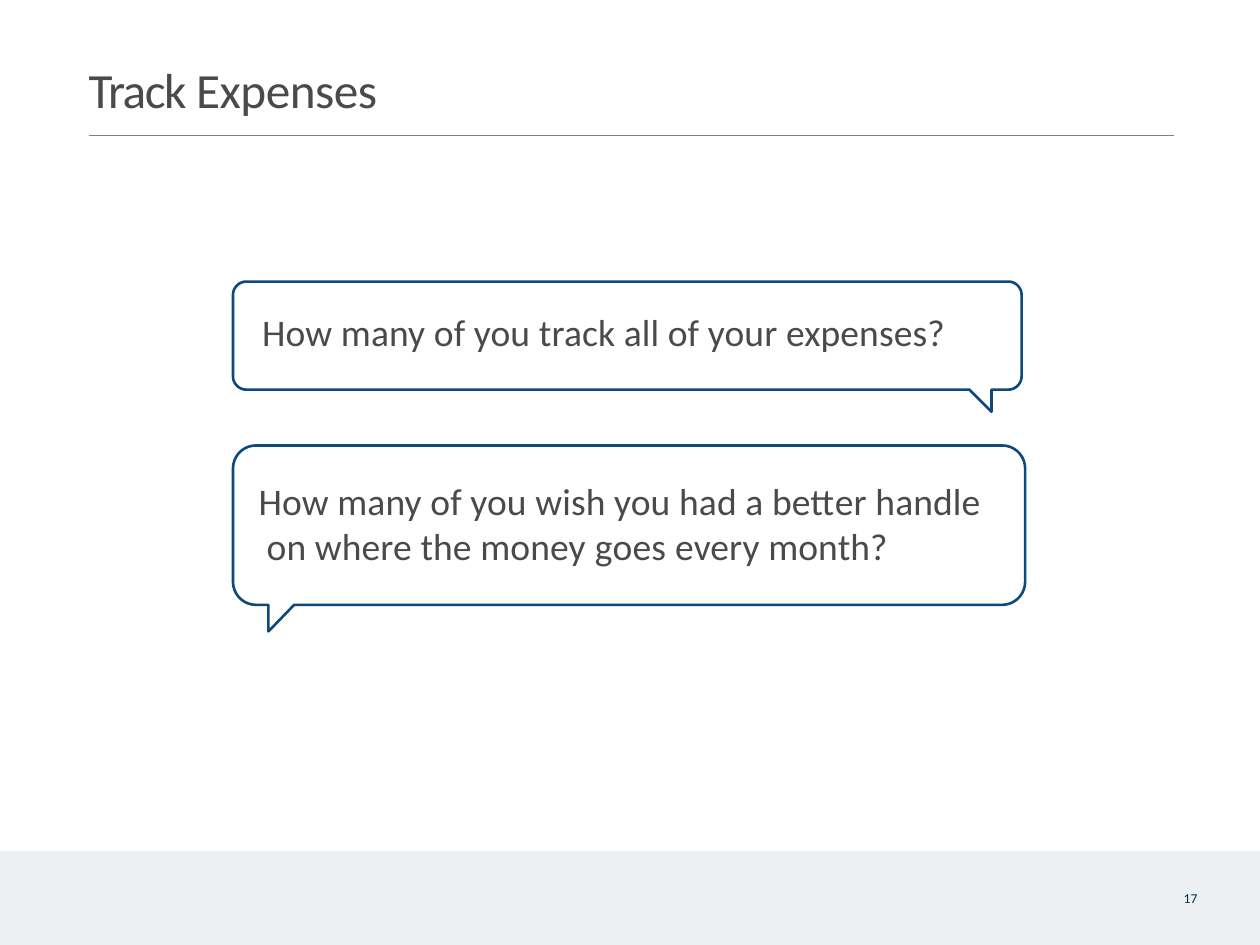
from dataclasses import dataclass
from math import cos, radians, sin

from lxml import etree
from pptx import Presentation
from pptx import util as u
from pptx.dml.color import RGBColor
from pptx.enum import shapes, text
from pptx.oxml import ns

GREY = RGBColor(0x4A, 0x4A, 0x4A)
RULE = RGBColor(0x7F, 0x7F, 0x7F)
BLUE = RGBColor(0x0D, 0x49, 0x7B)
NAVY = RGBColor(0x00, 0x2B, 0x49)
PALE = RGBColor(0xED, 0xF0, 0xF3)
WIDE, HIGH = 14.22, 10.67


@dataclass
class Run:
    words: str
    track: float = 0


@dataclass
class Label:
    left: float
    top: float
    width: float
    height: float
    runs: list[Run]
    size: float
    color: RGBColor
    inset: float = 0.01
    before: float = 1.4
    line: float = 1.0
    margin: float = 0.01
    hang: float = 0
    wrap: bool = False


@dataclass
class Bubble:
    left: float
    top: float
    right: float
    bottom: float
    radius: float
    tail: list[tuple[float, float]]


LABELS = [
    Label(0.99, 0.66, 3.45, 0.69, [Run("Track ", -1.2), Run("Expenses", -0.4)],
          40, GREY, before=1),
    Label(2.91, 5.38, 8.21, 1.06,
          [Run("How many of you wish you had a better handle on where the money ", 0.1),
           Run("goes ", 0.2), Run("every month?", 0.1)],
          30.5, GREY, before=0.9, line=1.01, margin=0.1, hang=-0.09, wrap=True),
    Label(2.95, 3.47, 7.77, 0.54,
          [Run("How many of you track all of your expenses?", 0.1)],
          30.5, GREY, inset=0.02),
    Label(13.33, 10.03, 0.23, 0.2, [Run("17")], 11, NAVY, inset=0.02, margin=0.03),
]
BUBBLES = [
    Bubble(2.63, 5.03, 11.57, 6.83, 0.26, [(3.32, 6.83), (3.03, 7.13), (3.03, 6.83)]),
    Bubble(2.63, 3.18, 11.53, 4.4, 0.15, [(11.19, 4.4), (11.19, 4.65), (10.94, 4.4)]),
]


def apply(target, values: dict) -> None:
    for name, value in values.items():
        setattr(target, name, value)


def arc(x: float, y: float, radius: float, start: int) -> list[tuple[float, float]]:
    turns = [radians(start + step) for step in range(0, 91, 10)]
    return [(x + radius * cos(turn), y + radius * sin(turn)) for turn in turns]


def draw_bubble(slide, item: Bubble) -> None:
    r = item.radius
    west, east = item.left + r, item.right - r
    north, south = item.top + r, item.bottom - r
    points = (arc(west, north, r, 180) + arc(east, north, r, 270)
              + arc(east, south, r, 0) + item.tail + arc(west, south, r, 90))
    spots = [(u.Inches(x), u.Inches(y)) for x, y in points]
    pen = slide.shapes.build_freeform(*spots[0])
    pen.add_line_segments(spots[1:], close=True)
    shape = pen.convert_to_shape()
    shape.shadow.inherit = False
    shape.fill.background()
    shape.line.color.rgb = BLUE
    shape.line.width = u.Pt(2.12)


def draw_label(slide, item: Label) -> None:
    spot = map(u.Inches, (item.left, item.top, item.width, item.height))
    frame = slide.shapes.add_textbox(*spot).text_frame
    apply(frame, {"margin_left": 0, "margin_right": 0, "margin_bottom": 0,
                  "margin_top": u.Inches(item.inset), "word_wrap": item.wrap,
                  "vertical_anchor": text.MSO_ANCHOR.TOP})
    para = frame.paragraphs[0]
    apply(para, {"space_before": u.Pt(item.before), "line_spacing": item.line,
                 "alignment": text.PP_ALIGN.LEFT})
    props = para._p.get_or_add_pPr()
    props.set("marL", str(u.Inches(item.margin)))
    props.set("indent", str(u.Inches(item.hang)))
    for part in item.runs:
        run = para.add_run()
        run.text = part.words
        apply(run.font, {"name": "Calibri", "size": u.Pt(item.size)})
        run.font.color.rgb = item.color
        run._r.get_or_add_rPr().set("spc", str(round(part.track * 100)))


def draw_band(slide) -> None:
    top = 9.61
    band = slide.shapes.add_shape(shapes.MSO_SHAPE.RECTANGLE, 0, u.Inches(top),
                                  u.Inches(WIDE), u.Inches(HIGH - top))
    band.shadow.inherit = False
    band.fill.solid()
    band.fill.fore_color.rgb = PALE
    band.line.fill.background()


def draw_rule(slide) -> None:
    ends = map(u.Inches, (1, 1.53, 13.25, 1.53))
    rule = slide.shapes.add_connector(shapes.MSO_CONNECTOR.STRAIGHT, *ends)
    rule.line.color.rgb = RULE
    rule.line.width = u.Pt(1)
    etree.SubElement(rule._element.spPr, ns.qn("a:effectLst"))


def main() -> None:
    deck = Presentation()
    apply(deck, {"slide_width": u.Inches(WIDE), "slide_height": u.Inches(HIGH)})
    slide = deck.slides.add_slide(deck.slide_layouts[6])
    draw_band(slide)
    draw_rule(slide)
    for item in BUBBLES:
        draw_bubble(slide, item)
    for item in LABELS:
        draw_label(slide, item)
    deck.save("out.pptx")


if __name__ == "__main__":
    main()
